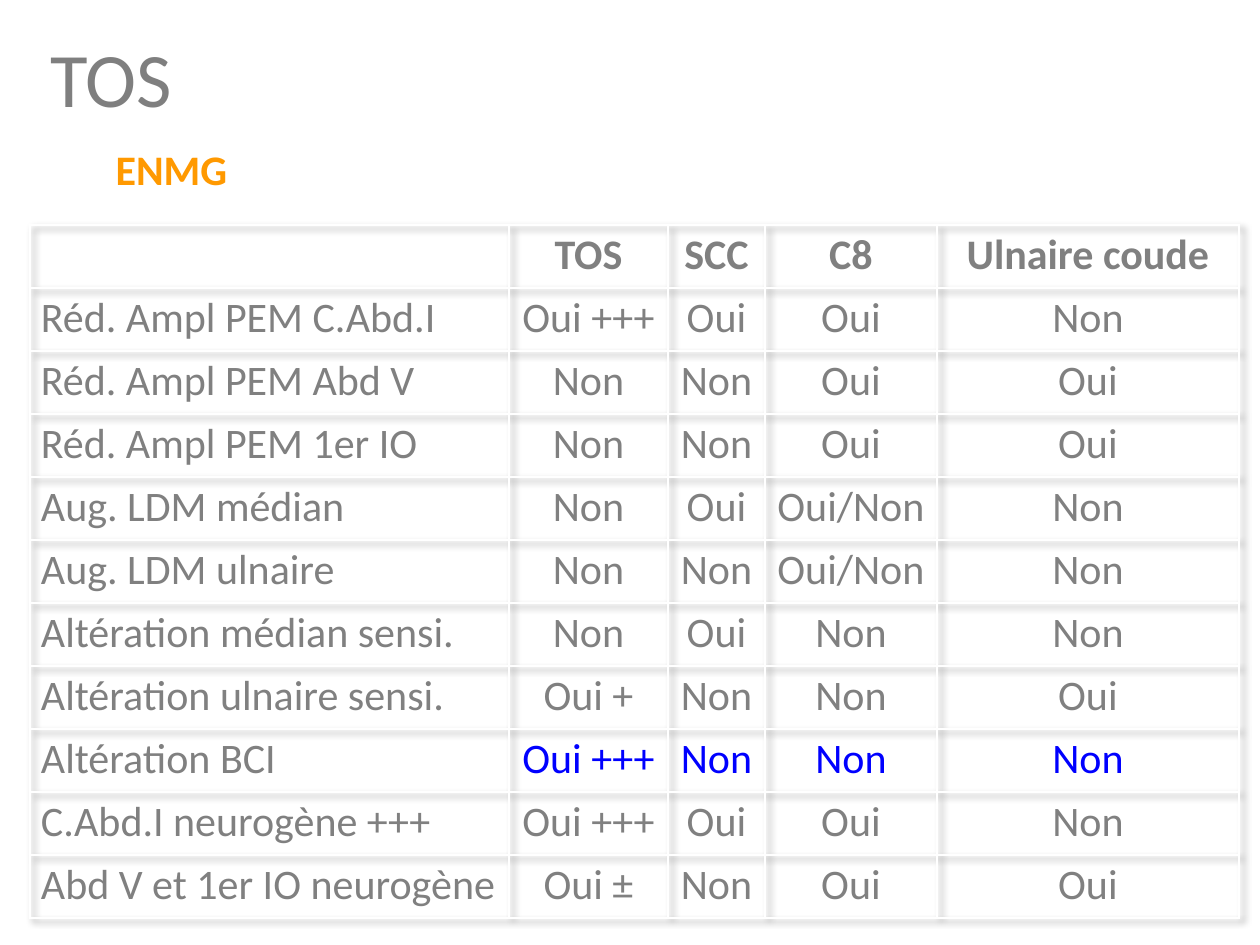
from dataclasses import dataclass

from lxml import etree
from pptx import Presentation
from pptx.dml.color import RGBColor
from pptx.enum.text import MSO_ANCHOR, MSO_AUTO_SIZE, PP_ALIGN
from pptx.oxml.ns import qn
from pptx.util import Pt

LEFT, CENTER = PP_ALIGN.LEFT, PP_ALIGN.CENTER
TOP = MSO_ANCHOR.TOP
NO_FIT = MSO_AUTO_SIZE.NONE
EMU_PER_PX = 914400 / 126
COLUMN_WIDTHS = (479, 159, 97, 172, 302)
ROW_HEIGHT = 63
CELL_MARGIN_X, CELL_MARGIN_Y = 11, 5
HIGHLIGHTED_ROW = "Altération BCI"
ROWS = (
    ("", "TOS", "SCC", "C8", "Ulnaire coude"),
    ("Réd. Ampl PEM C.Abd.I", "Oui +++", "Oui", "Oui", "Non"),
    ("Réd. Ampl PEM Abd V", "Non", "Non", "Oui", "Oui"),
    ("Réd. Ampl PEM 1er IO", "Non", "Non", "Oui", "Oui"),
    ("Aug. LDM médian", "Non", "Oui", "Oui/Non", "Non"),
    ("Aug. LDM ulnaire", "Non", "Non", "Oui/Non", "Non"),
    ("Altération médian sensi.", "Non", "Oui", "Non", "Non"),
    ("Altération ulnaire sensi.", "Oui +", "Non", "Non", "Oui"),
    (HIGHLIGHTED_ROW, "Oui +++", "Non", "Non", "Non"),
    ("C.Abd.I neurogène +++", "Oui +++", "Oui", "Oui", "Non"),
    ("Abd V et 1er IO neurogène", "Oui ±", "Non", "Oui", "Oui"),
)


@dataclass(frozen=True)
class Theme:
    """Colours and type sizes of the slide."""

    font: str = "Calibri"
    title: str = "7F7F7F"
    accent: str = "FF9900"
    text: str = "808080"
    highlight: str = "0000FF"
    border: str = "FFFFFF"
    shadow: str = "000000"
    title_size: int = 44
    body_size: int = 24


THEME = Theme()


def px(length):
    """Convert pixels to EMU."""
    return round(length * EMU_PER_PX)


def add_run(paragraph, text, size, color, bold=False):
    """Add one formatted run to a paragraph."""
    run = paragraph.add_run()
    run.text = text
    run.font.name = THEME.font
    run.font.size = Pt(size)
    run.font.bold = bold
    run.font.color.rgb = RGBColor.from_string(color)


def add_node(parent, tag, **attributes):
    """Append a DrawingML element and return it."""
    return etree.SubElement(parent, qn(tag), attributes)


def prepare_placeholder(shape, left, top, width, height):
    """Move a placeholder and return its left-aligned first paragraph."""
    shape.left, shape.top = px(left), px(top)
    shape.width, shape.height = px(width), px(height)
    frame = shape.text_frame
    frame.auto_size = NO_FIT
    frame.vertical_anchor = TOP
    paragraph = frame.paragraphs[0]
    paragraph.alignment = LEFT
    return paragraph


def add_title(slide):
    """Fill the title placeholder."""
    paragraph = prepare_placeholder(slide.shapes.title, 38, 24, 149, 106)
    slide.shapes.title.text_frame.word_wrap = False
    add_run(paragraph, "TOS", THEME.title_size, THEME.title)


def add_subtitle(slide):
    """Fill the body placeholder with an indented heading."""
    paragraph = prepare_placeholder(slide.placeholders[1], 38, 127, 1172, 72)
    paragraph.line_spacing = 1.2
    paragraph.space_before = Pt(0)
    properties = paragraph._p.get_or_add_pPr()
    properties.set("marL", str(px(65)))
    properties.set("indent", "0")
    add_node(properties, "a:buNone")
    add_run(paragraph, "ENMG", THEME.body_size, THEME.accent, bold=True)


def set_borders(cell):
    """Draw thin lines on all sides of a cell."""
    properties = cell._tc.get_or_add_tcPr()
    for index, side in enumerate(("a:lnL", "a:lnR", "a:lnT", "a:lnB")):
        line = etree.Element(qn(side), w=str(Pt(1)))
        fill = add_node(line, "a:solidFill")
        add_node(fill, "a:srgbClr", val=THEME.border)
        properties.insert(index, line)


def add_table_shadow(table):
    """Give the table grid a soft shadow towards the lower right."""
    effects = etree.Element(qn("a:effectLst"))
    shadow = add_node(effects, "a:outerShdw", blurRad=str(Pt(4)), dist=str(Pt(3)),
                      dir="2700000", algn="tl", rotWithShape="0")
    color = add_node(shadow, "a:srgbClr", val=THEME.shadow)
    add_node(color, "a:alpha", val="40000")
    table._tbl.tblPr.insert(0, effects)


def fill_cell(cell, text, alignment, color, bold):
    """Format one table cell and write its text."""
    cell.fill.background()
    cell.margin_left = cell.margin_right = px(CELL_MARGIN_X)
    cell.margin_top = cell.margin_bottom = px(CELL_MARGIN_Y)
    set_borders(cell)
    paragraph = cell.text_frame.paragraphs[0]
    paragraph.alignment = alignment
    paragraph.font.size = Pt(THEME.body_size)
    if text:
        add_run(paragraph, text, THEME.body_size, color, bold)


def add_findings_table(slide):
    """Add the table comparing findings by syndrome."""
    frame = slide.shapes.add_table(
        len(ROWS), len(COLUMN_WIDTHS), px(30), px(225),
        px(sum(COLUMN_WIDTHS)), px(ROW_HEIGHT * len(ROWS)))
    table = frame.table
    table.first_row = table.horz_banding = False
    add_table_shadow(table)
    for column, width in zip(table.columns, COLUMN_WIDTHS):
        column.width = px(width)
    for row_index, values in enumerate(ROWS):
        table.rows[row_index].height = px(ROW_HEIGHT)
        for column_index, text in enumerate(values):
            highlighted = column_index and values[0] == HIGHLIGHTED_ROW
            fill_cell(table.cell(row_index, column_index), text,
                      CENTER if column_index else LEFT,
                      THEME.highlight if highlighted else THEME.text,
                      bold=row_index == 0)


def main():
    """Build and save the slide."""
    presentation = Presentation()
    presentation.slide_width, presentation.slide_height = px(1260), px(945)
    slide = presentation.slides.add_slide(presentation.slide_layouts[1])
    add_title(slide)
    add_subtitle(slide)
    add_findings_table(slide)
    presentation.save("out.pptx")


if __name__ == "__main__":
    main()
